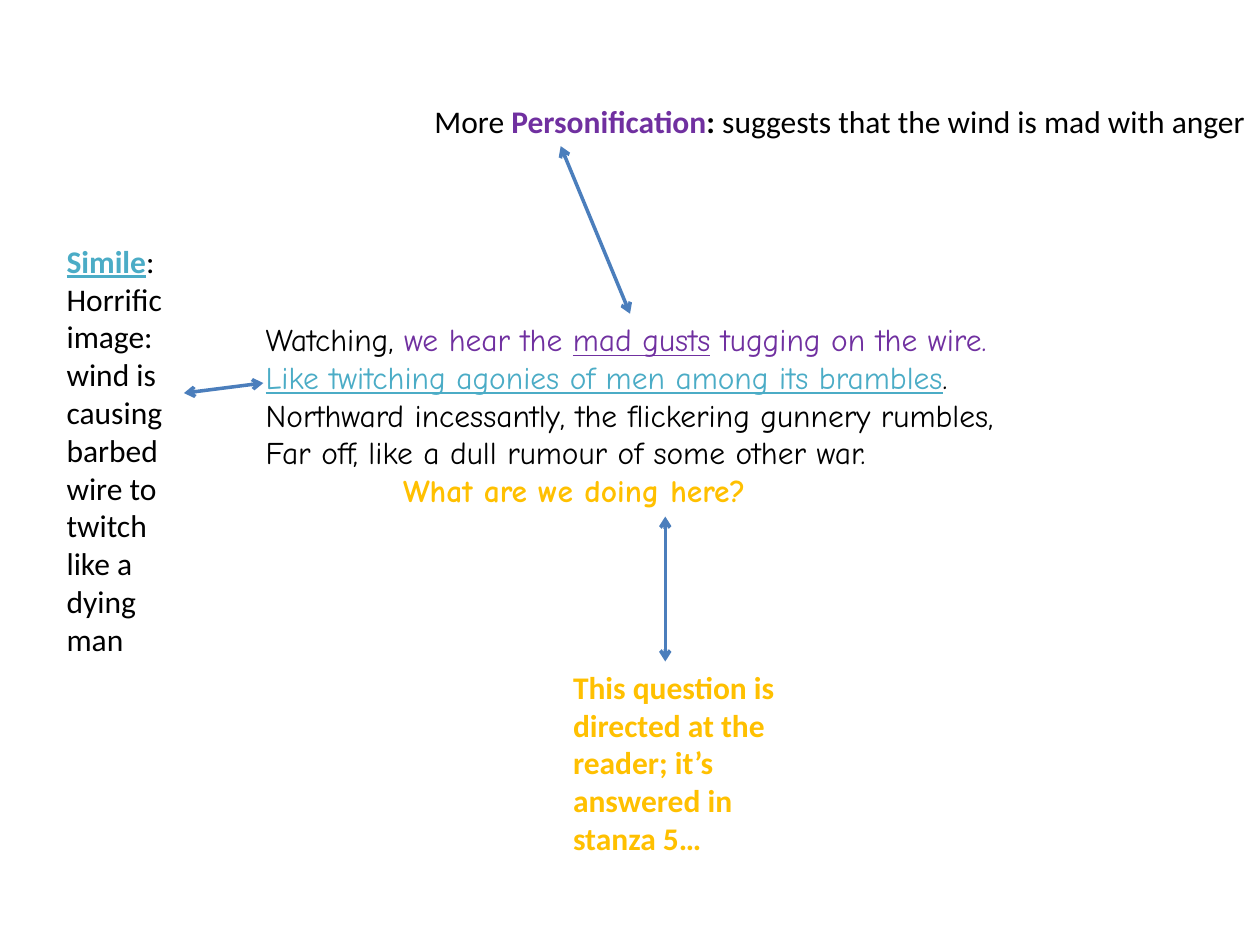
from lxml import etree
from pptx import Presentation
from pptx import util as u
from pptx.dml.color import RGBColor
from pptx.enum import shapes
from pptx.oxml.ns import qn

BLACK = RGBColor(0x00, 0x00, 0x00)
PURPLE = RGBColor(0x70, 0x30, 0xA0)
TEAL = RGBColor(0x4B, 0xAC, 0xC6)
GOLD = RGBColor(0xFF, 0xC0, 0x00)
BLUE = RGBColor(0x4B, 0x7E, 0xBC)

POEM_BOX = (2.01, 2.49, 7.09, 1.62)
PERSONIFICATION_BOX = (3.35, 0.76, 6.73, 0.4)
QUESTION_BOX = (4.45, 5.25, 2.13, 1.62)
SIMILE_BOX = (0.43, 1.87, 1.02, 3.43)


def add_text(page, box, lines, font, wrap=True):
    frame = page.shapes.add_textbox(*map(u.Inches, box)).text_frame
    frame.word_wrap = wrap
    for index, spans in enumerate(lines):
        para = frame.paragraphs[0] if index == 0 else frame.add_paragraph()
        for words, color, styles in spans:
            span = para.add_run()
            span.text = words
            formats = {"name": font, "size": u.Pt(18), **styles}
            for name, value in formats.items():
                setattr(span.font, name, value)
            span.font.color.rgb = color
    return frame


def add_arrow(page, start, end):
    arrow = page.shapes.add_connector(
        shapes.MSO_CONNECTOR.STRAIGHT, *map(u.Inches, start + end))
    arrow.line.color.rgb = BLUE
    arrow.line.width = u.Pt(2)
    line = arrow.line._get_or_add_ln()
    for tag in ("a:headEnd", "a:tailEnd"):
        etree.SubElement(line, qn(tag), type="arrow")
    etree.SubElement(arrow._element.spPr, qn("a:effectLst"))


def add_poem(page, box):
    lines = [
        [("Watching, ", BLACK, {}),
         ("we hear the ", PURPLE, {}),
         ("mad gusts", PURPLE, {"underline": True}),
         (" tugging on the wire.", PURPLE, {})],
        [("Like twitching agonies of men among its brambles", TEAL,
          {"underline": True}),
         (".", BLACK, {})],
        [("Northward incessantly, the flickering gunnery rumbles,", BLACK, {})],
        [("Far off, like a dull rumour of some other war.", BLACK, {})],
        [("What are we doing here?", GOLD, {"bold": True})],
    ]
    frame = add_text(page, box, lines, "Comic Neue")
    refrain = frame.paragraphs[-1]._p.get_or_add_pPr()
    refrain.set("marL", str(u.Inches(1.09)))


def add_personification(page, box):
    left, top, width, height = box
    spans = [("More ", BLACK, {}),
             ("Personification", PURPLE, {"bold": True}),
             (": ", BLACK, {"bold": True}),
             ("suggests that the wind is mad with anger", BLACK, {})]
    add_text(page, box, [spans], "Calibri", wrap=False)
    bottom = top + height
    add_arrow(page, (left + 1.1, bottom), (left + 1.65, bottom + 1.33))


def add_question(page, box):
    left, top, width, height = box
    spans = [("This question is directed at the reader; it’s answered in "
              "stanza 5…", GOLD, {"bold": True})]
    add_text(page, box, [spans], "Calibri")
    add_arrow(page, (left + 0.83, top - 1.15), (left + 0.83, top))


def add_simile(page, box):
    left, top, width, height = box
    spans = [("Simile", TEAL, {"bold": True, "underline": True}),
             (": Horrific image: wind is causing barbed wire to twitch like "
              "a dying man", BLACK, {})]
    add_text(page, box, [spans], "Calibri")
    right = left + width
    add_arrow(page, (right + 0.64, top + 1.17), (right + 0.01, top + 1.25))


def main():
    deck = Presentation()
    deck.slide_width, deck.slide_height = u.Inches(10), u.Inches(7.5)
    page = deck.slides.add_slide(deck.slide_layouts[6])
    add_poem(page, POEM_BOX)
    add_personification(page, PERSONIFICATION_BOX)
    add_question(page, QUESTION_BOX)
    add_simile(page, SIMILE_BOX)
    deck.save("out.pptx")


if __name__ == "__main__":
    main()
